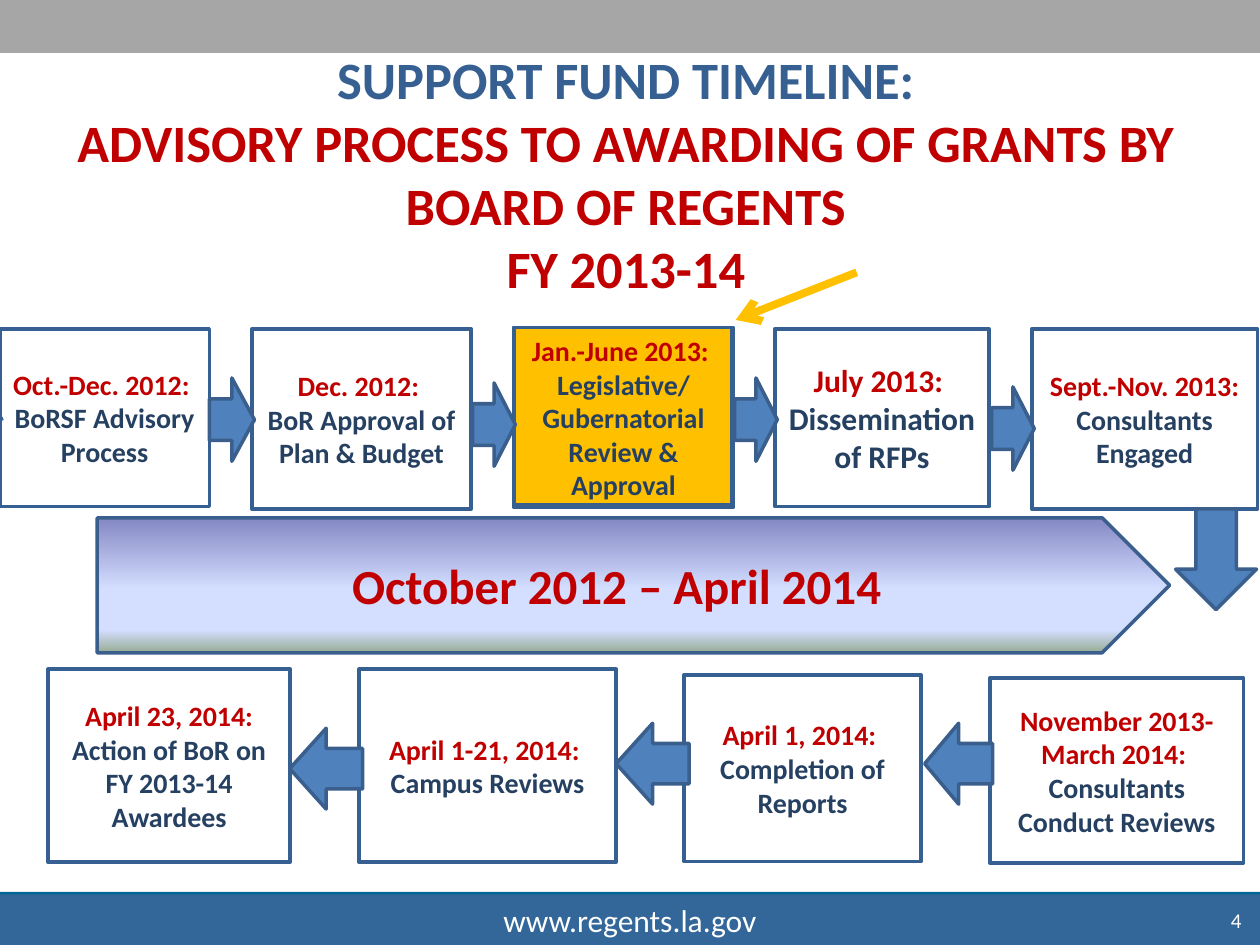
from dataclasses import dataclass

from lxml.etree import SubElement
from pptx import Presentation
from pptx.dml.color import RGBColor
from pptx.enum.shapes import MSO_CONNECTOR, MSO_SHAPE
from pptx.enum.text import MSO_ANCHOR, MSO_AUTO_SIZE, PP_ALIGN
from pptx.oxml.ns import qn
from pptx.util import Cm, Pt

RECTANGLE = MSO_SHAPE.RECTANGLE
CALLOUT = MSO_SHAPE.LINE_CALLOUT_1
PENTAGON = MSO_SHAPE.PENTAGON
ARROW = MSO_SHAPE.RIGHT_ARROW
STRAIGHT = MSO_CONNECTOR.STRAIGHT
MIDDLE = MSO_ANCHOR.MIDDLE
CENTER, RIGHT = PP_ALIGN.CENTER, PP_ALIGN.RIGHT
NO_AUTOFIT = MSO_AUTO_SIZE.NONE


@dataclass(frozen=True)
class Theme:
    """Colours, font and type sizes of the slide."""

    font: str = "Calibri"
    blue: str = "376092"
    red: str = "C00000"
    navy: str = "254061"
    white: str = "FFFFFF"
    grey: str = "A6A6A6"
    gold: str = "FFC000"
    footer: str = "336699"
    footer_edge: str = "006795"
    arrow: str = "4F81BD"
    outline: str = "3A5F8C"
    gradient: tuple = ((0, "8488C4"), (53, "D4DEFF"), (83, "D4DEFF"), (100, "96AB94"))
    title_size: int = 30
    banner_size: int = 28
    large_size: int = 18
    step_size: int = 16
    number_size: int = 12
    border: int = 2
    pointer: float = 4.5


THEME = Theme()

STEPS = (
    ((0, 6.63, 4.22, 3.58), (0.515, -0.009, 0.504, 0.015), THEME.step_size,
     ("Oct.-Dec. 2012: ",), ("BoRSF Advisory Process",)),
    ((5.08, 6.63, 4.42, 3.63), (0.515, -0.009, 0.504, 0.015), THEME.step_size,
     ("Dec. 2012: ",), ("BoR Approval of Plan & Budget",)),
    ((10.36, 6.6, 4.42, 3.63), (0.515, 0, 0.539, -0.004), THEME.step_size,
     ("Jan.-June 2013: ",), ("Legislative/", "Gubernatorial Review & Approval")),
    ((15.62, 6.63, 4.32, 3.58), (0.515, 0, 0.524, 0.006), THEME.large_size,
     ("July 2013: ",), ("Dissemination of RFPs",)),
    ((20.8, 6.63, 4.55, 3.63), (0.532, -0.009, 0.556, -0.004), THEME.step_size,
     ("Sept.-Nov. 2013:",), ("Consultants Engaged",)),
    ((19.96, 13.67, 5.11, 3.73), (0.498, -0.009, 0.486, 0.006), THEME.step_size,
     ("November 2013-", "March 2014: "), ("Consultants Conduct Reviews",)),
    ((13.79, 13.61, 4.78, 3.76), (0.532, 0.009, 0.487, 0.006), THEME.step_size,
     ("April 1, 2014: ",), ("Completion of Reports",)),
    ((7.24, 13.49, 5.18, 3.89), (0.498, -0.009, 0.509, -0.004), THEME.step_size,
     ("April 1-21, 2014: ",), ("Campus Reviews",)),
    ((0.97, 13.49, 4.88, 3.89), (0.498, 0, 0.469, 0), THEME.step_size,
     ("April 23, 2014:",), ("Action of BoR on FY 2013-14 Awardees",)),
)

ARROWS = (
    ((4.22, 7.62, 0.91, 1.68), 0),
    ((9.53, 7.72, 0.86, 1.68), 0),
    ((14.81, 7.62, 0.86, 1.68), 0),
    ((19.99, 7.8, 0.86, 1.68), 0),
    ((23.5, 10.46, 2.03, 1.63), 90),
    ((18.64, 14.58, 1.37, 1.63), 180),
    ((12.42, 14.58, 1.47, 1.63), 180),
    ((5.84, 14.68, 1.47, 1.63), 180),
)


def color(value):
    """Return the colour object for a hex value."""
    return RGBColor.from_string(value)


def lengths(values):
    """Turn centimetre values into lengths."""
    return [Cm(value) for value in values]


def style_span(span, size, ink, bold=True):
    """Set the font of one run."""
    span.font.name = THEME.font
    span.font.size = Pt(size)
    span.font.bold = bold
    span.font.color.rgb = color(ink)


def write(box, lines, size, bold=True, align=CENTER):
    """Fill a box with one paragraph for each text and colour pair."""
    frame = box.text_frame
    frame.word_wrap = True
    frame.vertical_anchor = MIDDLE
    frame.text = "\n".join(text for text, ink in lines)
    for para, (text, ink) in zip(frame.paragraphs, lines):
        para.alignment = align
        for span in para.runs:
            style_span(span, size, ink, bold)


def add_box(page, kind, place, fill=None, outline=None):
    """Add a flat preset shape."""
    box = page.shapes.add_shape(kind, *lengths(place))
    box.shadow.inherit = False
    if fill:
        box.fill.solid()
        box.fill.fore_color.rgb = color(fill)
    else:
        box.fill.background()
    if outline:
        box.line.color.rgb = color(outline)
        box.line.width = Pt(THEME.border)
    else:
        box.line.fill.background()
    return box


def add_title(page):
    """Place the title in the layout's placeholder."""
    title = page.shapes.title
    title.left, title.top, title.width, title.height = lengths((1.19, 2.54, 22.86, 3.18))
    frame = title.text_frame
    frame.auto_size = NO_AUTOFIT
    frame.vertical_anchor = MIDDLE
    frame.text = (
        "SUPPORT FUND TIMELINE:\v"
        "ADVISORY PROCESS TO AWARDING OF GRANTS BY BOARD OF REGENTS\vFY 2013-14\v"
    )
    para = frame.paragraphs[0]
    para.alignment = CENTER
    para.font.size = Pt(THEME.title_size)
    for line_break in para._p.findall(qn("a:br")):
        SubElement(line_break, qn("a:rPr"), sz=str(THEME.title_size * 100))
    for index, span in enumerate(para.runs):
        style_span(span, THEME.title_size, THEME.red if index else THEME.blue)


def add_banner(page):
    """Add the wide pentagon with its gradient."""
    banner = add_box(page, PENTAGON, (1.96, 10.44, 21.62, 2.72), outline=THEME.outline)
    banner.fill.gradient()
    banner.fill.gradient_angle = 270
    stops = banner.element.spPr.find(".//" + qn("a:gsLst"))
    stops.clear()
    for position, value in THEME.gradient:
        stop = SubElement(stops, qn("a:gs"), pos=str(position * 1000))
        SubElement(stop, qn("a:srgbClr"), val=value)
    write(banner, [("October 2012 – April 2014", THEME.red)], THEME.banner_size)


def add_step(page, place, callout, size, dates, actions):
    """Add one step with red dates above navy actions."""
    step = add_box(page, CALLOUT, place, outline=THEME.blue)
    for index, value in enumerate(callout):
        step.adjustments[index] = value
    lines = [(text, THEME.red) for text in dates]
    lines += [(text, THEME.navy) for text in actions]
    write(step, lines, size)


def add_pointer(page):
    """Add the gold arrow towards the current step."""
    pointer = page.shapes.add_connector(STRAIGHT, *lengths((17.27, 5.49, 14.83, 6.45)))
    pointer.line.color.rgb = color(THEME.gold)
    pointer.line.width = Pt(THEME.pointer)
    SubElement(pointer.line._get_or_add_ln(), qn("a:tailEnd"), type="arrow")
    SubElement(pointer.element.spPr, qn("a:effectLst"))


def add_bands(page):
    """Add the bands at the top and bottom with the address and page number."""
    add_box(page, RECTANGLE, (0, 17.98, 25.4, 1.07), THEME.footer_edge)
    add_box(page, RECTANGLE, (0, 0, 25.4, 1.07), THEME.grey)
    footer = add_box(page, RECTANGLE, (0, 18.03, 25.4, 1.02), THEME.footer)
    write(footer, [("www.regents.la.gov", THEME.white)], THEME.large_size, bold=False)
    number = page.shapes.add_textbox(*lengths((24.26, 18.03, 1.02, 1.02)))
    write(number, [("4", THEME.white)], THEME.number_size, bold=False, align=RIGHT)


def main():
    """Build the timeline slide and save it."""
    deck = Presentation()
    deck.slide_width, deck.slide_height = lengths((25.4, 19.05))
    page = deck.slides.add_slide(deck.slide_layouts[5])
    add_bands(page)
    add_title(page)
    add_box(page, RECTANGLE, (10.36, 6.6, 4.39, 3.58), THEME.gold, THEME.outline)
    add_banner(page)
    for step in STEPS:
        add_step(page, *step)
    for place, rotation in ARROWS:
        add_box(page, ARROW, place, THEME.arrow, THEME.outline).rotation = rotation
    add_pointer(page)
    deck.save("out.pptx")


if __name__ == "__main__":
    main()
